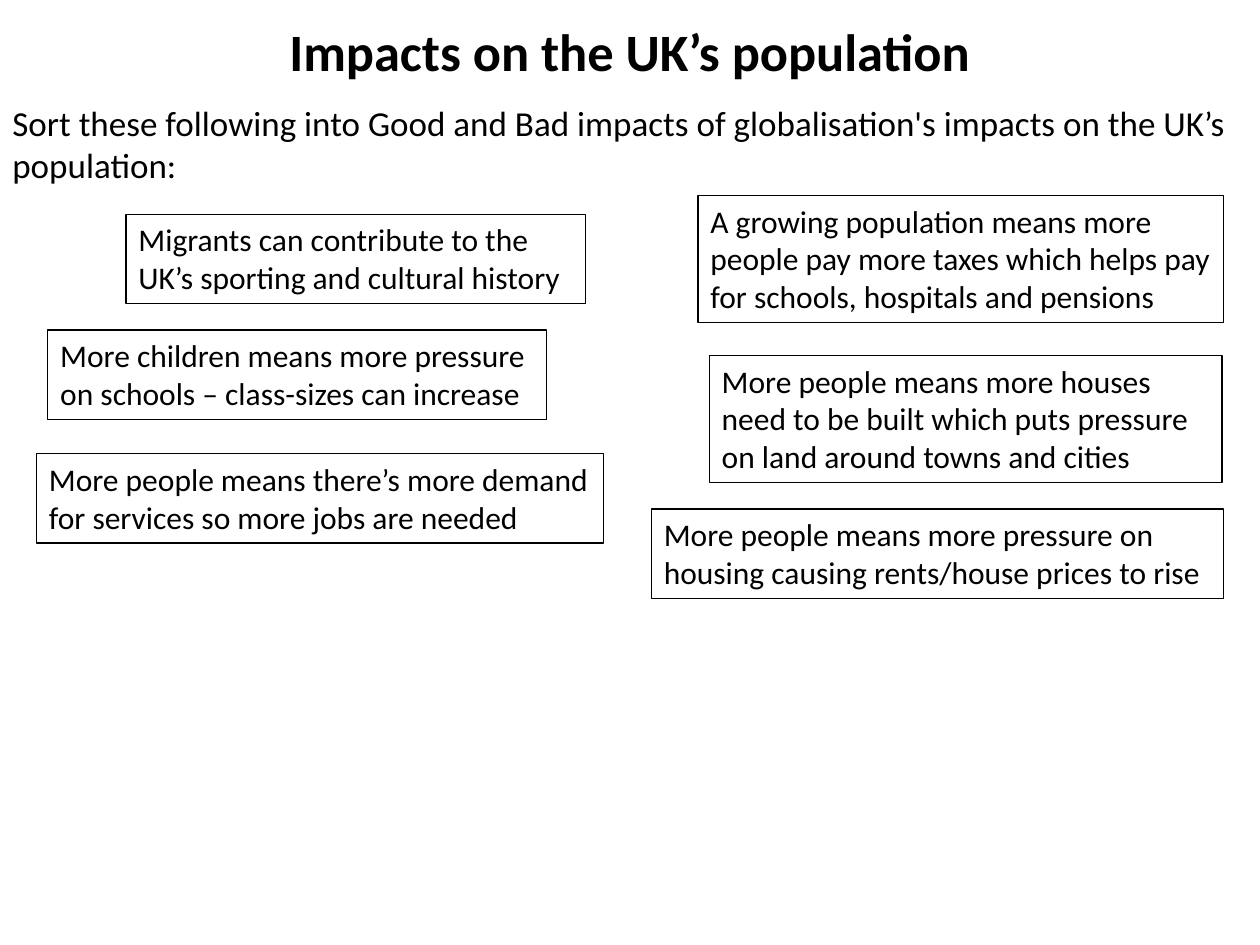
from dataclasses import dataclass
from pptx import Presentation
from pptx.dml.color import RGBColor
from pptx.enum.shapes import MSO_SHAPE
from pptx.enum.text import MSO_ANCHOR, MSO_AUTO_SIZE, PP_ALIGN
from pptx.util import Inches, Pt


@dataclass(frozen=True)
class Theme:
    font: str = "Calibri"
    ink: RGBColor = RGBColor(0, 0, 0)
    title: int = 30
    task: int = 20
    card: int = 18
    border: float = 0.75


theme = Theme()
deck = Presentation()
deck.slide_width, deck.slide_height = Inches(10), Inches(7.5)
column, row = deck.slide_width / 100, deck.slide_height / 75
slide = deck.slides.add_slide(deck.slide_layouts[5])


def grid(left, top, width, height):
    return [round(n) for n in (left * column, top * row, width * column, height * row)]


def write(shape, text, size, bold=False, align=PP_ALIGN.LEFT, after=0):
    frame = shape.text_frame
    frame.word_wrap = True
    frame.auto_size = MSO_AUTO_SIZE.SHAPE_TO_FIT_TEXT
    frame.vertical_anchor = MSO_ANCHOR.TOP
    frame.text = text
    paragraph = frame.paragraphs[0]
    paragraph.alignment = align
    paragraph.space_after = Pt(after)
    font = paragraph.runs[0].font
    font.name, font.size, font.bold = theme.font, Pt(size), bold
    font.color.rgb = theme.ink


heading = slide.shapes.title
heading.left, heading.top, heading.width, heading.height = grid(0, 1, 100, 6.1)
write(heading, "Impacts on the UK’s population", theme.title, bold=True, align=PP_ALIGN.CENTER)

task = slide.shapes.add_textbox(*grid(0, 7.6, 100, 7.7))
write(task, "Sort these following into Good and Bad impacts of globalisation's impacts on the UK’s population:",
      theme.task, after=6)

two_lines, three_lines = 7.1, 10.1
impacts = [
    (10, 17, 36.5, two_lines, "Migrants can contribute to the UK’s sporting and cultural history"),
    (55.4, 15.5, 41.7, three_lines,
     "A growing population means more people pay more taxes which helps pay for schools, hospitals and pensions"),
    (3.8, 26.2, 39.6, two_lines, "More children means more pressure on schools – class-sizes can increase"),
    (2.9, 36, 45, two_lines, "More people means there’s more demand for services so more jobs are needed"),
    (56.3, 28.2, 40.7, three_lines,
     "More people means more houses need to be built which puts pressure on land around towns and cities"),
    (51.7, 40.4, 45.4, two_lines, "More people means more pressure on housing causing rents/house prices to rise"),
]
for left, top, width, height, impact in impacts:
    card = slide.shapes.add_shape(MSO_SHAPE.RECTANGLE, *grid(left, top, width, height))
    card.shadow.inherit = False
    card.fill.background()
    card.line.color.rgb = theme.ink
    card.line.width = Pt(theme.border)
    write(card, impact, theme.card)

deck.save("out.pptx")
